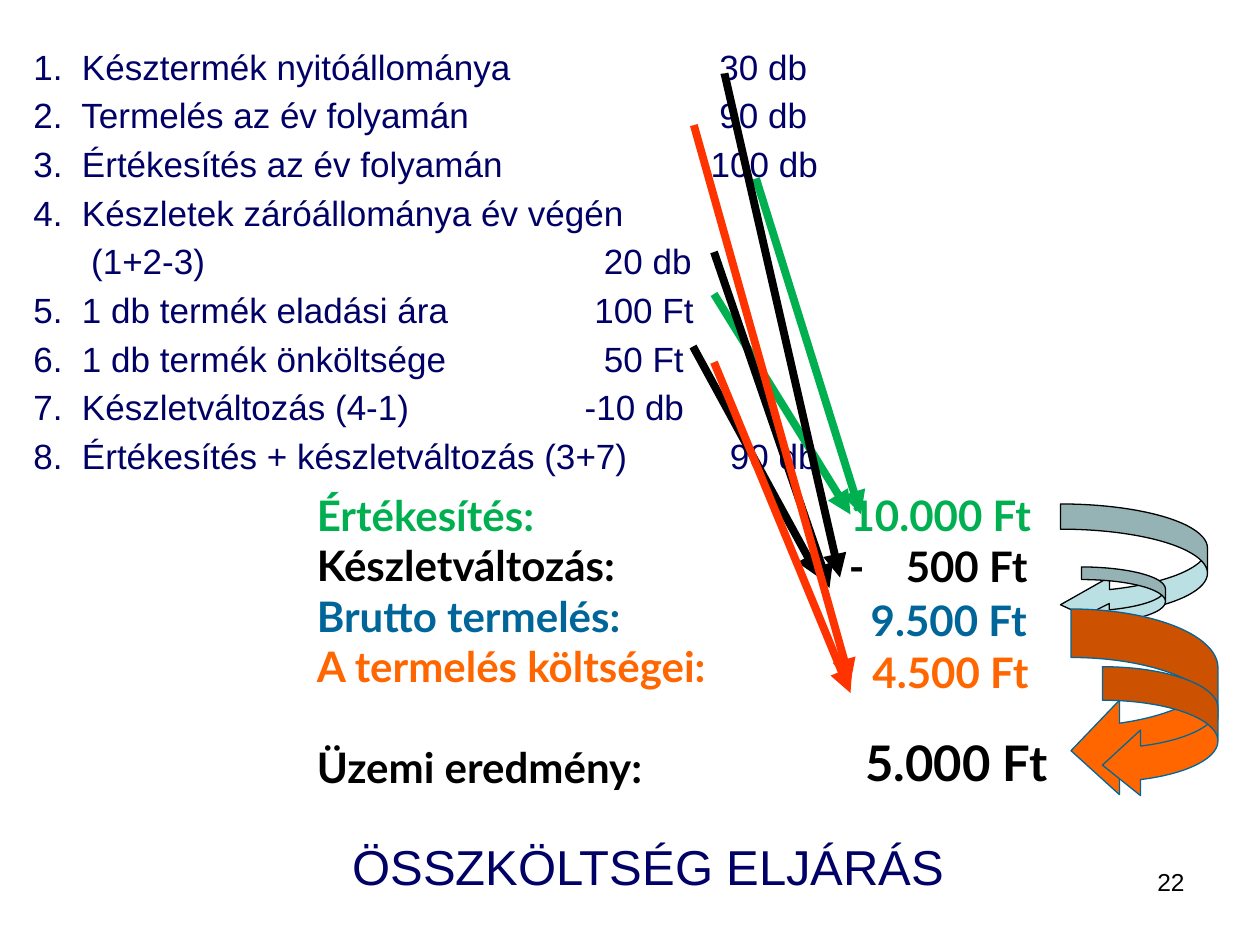
from pptx import Presentation
from pptx.dml.color import RGBColor as RGB
from pptx.enum.shapes import MSO_CONNECTOR as Link, MSO_SHAPE as Form
from pptx.enum.text import MSO_ANCHOR as Anchor, PP_ALIGN as Align
from pptx.oxml.ns import qn
from pptx.util import Pt
from lxml.etree import SubElement as sub

NAVY = RGB(0x00, 0x00, 0x66)
BLACK = RGB(0x00, 0x00, 0x00)
GREEN = RGB(0x00, 0xB0, 0x50)
BLUE = RGB(0x00, 0x66, 0x99)
ORANGE = RGB(0xFF, 0x66, 0x00)
RED = RGB(0xFF, 0x33, 0x00)
PALE = RGB(0xBB, 0xE0, 0xE3)

# Text and its tab stops in points
ITEMS = [
    ("1.  Késztermék nyitóállománya\t30 db", [392]),
    ("2.  Termelés az év folyamán\t90 db", [392]),
    ("3.  Értékesítés az év folyamán\t100 db", [387]),
    ("4.  Készletek záróállománya év végén", []),
    ("\t(1+2-3)\t20 db", [33, 326]),
    ("5.  1 db termék eladási ára\t100 Ft", [320.5]),
    ("6.  1 db termék önköltsége\t50 Ft", [326]),
    ("7.  Készletváltozás (4-1)\t-10 db", [315]),
    ("8.  Értékesítés + készletváltozás (3+7)\t90 db", [398]),
]
# Label, colour, space before
LABELS = [
    ("Értékesítés:", GREEN, 0),
    ("Készletváltozás:", BLACK, 0),
    ("Brutto termelés:", BLUE, 0),
    ("A termelés költségei:", ORANGE, 0),
    ("Üzemi eredmény:", BLACK, 28.8),
]
# Amount, colour, size, offset in the column, tab stops
AMOUNTS = [
    ("10.000 Ft", GREEN, 24, 1, 0, []),
    ("-\t500 Ft", BLACK, 24, 0, 29.5, [32.5]),
    ("9.500 Ft", BLUE, 24, 12.5, 60, []),
    ("4.500 Ft", ORANGE, 24, 13.5, 90, []),
    ("5.000 Ft", BLACK, 28, 9.5, 139, []),
]
# Start and end of each arrow
GREENS = [(432, 102, 492, 294), (408, 168, 486, 294)]
BLACKS = [(408, 144, 474, 336), (414, 42, 480, 330), (396, 198, 468, 330)]
REDS = [(396.5, 71.5, 486, 390), (408, 207, 486, 396)]


def style(par, size, color, name):
    font = par.font
    font.size, font.name = Pt(size), name
    font.color.rgb = color


def set_tabs(par, stops):
    if stops:
        tabs = sub(par._p.get_or_add_pPr(), qn("a:tabLst"))
        for stop in stops:
            sub(tabs, qn("a:tab"), pos=str(Pt(stop)), algn="l")


def add_box(slide, box, wrap=True):
    frame = slide.shapes.add_textbox(*map(Pt, box)).text_frame
    frame.word_wrap = wrap
    return frame


def add_pars(frame, count):
    return [frame.paragraphs[0]] + [frame.add_paragraph() for _ in range(count - 1)]


def add_title(slide, box):
    title = slide.shapes.title
    title.left, title.top, title.width, title.height = map(Pt, box)
    frame = title.text_frame
    frame.text = "ÖSSZKÖLTSÉG ELJÁRÁS"
    frame.vertical_anchor = Anchor.MIDDLE
    par = frame.paragraphs[0]
    par.alignment = Align.CENTER
    style(par, 28, NAVY, "Arial")


def add_items(slide, box):
    pars = add_pars(add_box(slide, box), len(ITEMS))
    for par, (text, stops) in zip(pars, ITEMS):
        par.text = text
        par.line_spacing = 0.95
        par.space_before = Pt(5)
        style(par, 20, NAVY, "Arial")
        set_tabs(par, stops)


def add_labels(slide, box):
    pars = add_pars(add_box(slide, box, False), len(LABELS))
    for par, (text, color, gap) in zip(pars, LABELS):
        par.text = text
        par.space_before = Pt(gap)
        style(par, 24, color, "Lato")
        par.font.bold = True


def add_amounts(slide, box):
    left, top, width, height = box
    for text, color, size, dx, dy, stops in AMOUNTS:
        frame = add_box(slide, (left + dx, top + dy, width, height), False)
        par = frame.paragraphs[0]
        par.text = text
        style(par, size, color, "Lato")
        par.font.bold = True
        set_tabs(par, stops)


def add_arrows(slide, ends, color):
    for points in ends:
        arrow = slide.shapes.add_connector(Link.STRAIGHT, *map(Pt, points))
        arrow.line.color.rgb = color
        arrow.line.width = Pt(4.5)
        sub(arrow.line._get_or_add_ln(), qn("a:tailEnd"), type="triangle")
        sub(arrow._element.spPr, qn("a:effectLst"))


def add_curve(slide, box, adjust, fill, line):
    curve = slide.shapes.add_shape(Form.CURVED_LEFT_ARROW, *map(Pt, box))
    for i, value in enumerate(adjust):
        curve.adjustments[i] = value
    curve.shadow.inherit = False
    curve.fill.solid()
    curve.fill.fore_color.rgb = fill
    curve.line.color.rgb = line
    curve.line.width = Pt(0.75)


def add_number(slide, box):
    par = add_box(slide, box).paragraphs[0]
    par.text = "22"
    par.alignment = Align.RIGHT
    style(par, 14, BLACK, "Arial")


def main():
    deck = Presentation()
    deck.slide_width, deck.slide_height = Pt(720), Pt(540)
    slide = deck.slides.add_slide(deck.slide_layouts[5])

    # Page number, list of data and title
    add_number(slide, (516, 492, 168, 37.5))
    add_items(slide, (12, 24, 696, 300))
    add_title(slide, (91.5, 450, 558, 90))

    # Statement, with arrows from the data to the amounts
    add_arrows(slide, GREENS, GREEN)
    add_labels(slide, (174, 276, 271.5, 181.5))
    add_amounts(slide, (478, 276, 130, 36))
    add_arrows(slide, BLACKS, BLACK)
    add_arrows(slide, REDS, RED)

    # Curved arrows between the amounts
    add_curve(slide, (606, 288, 84, 72), (0.2, 0.4, 0.39), PALE, BLACK)
    add_curve(slide, (618, 324, 48, 36), (0.2, 0.4, 0.44), PALE, BLACK)
    add_curve(slide, (612, 348, 84, 108), (0.33, 0.66, 0.33), ORANGE, BLUE)
    add_curve(slide, (630, 381, 66, 75), (0.29, 0.58, 0.33), ORANGE, BLUE)

    deck.save("out.pptx")


if __name__ == "__main__":
    main()
